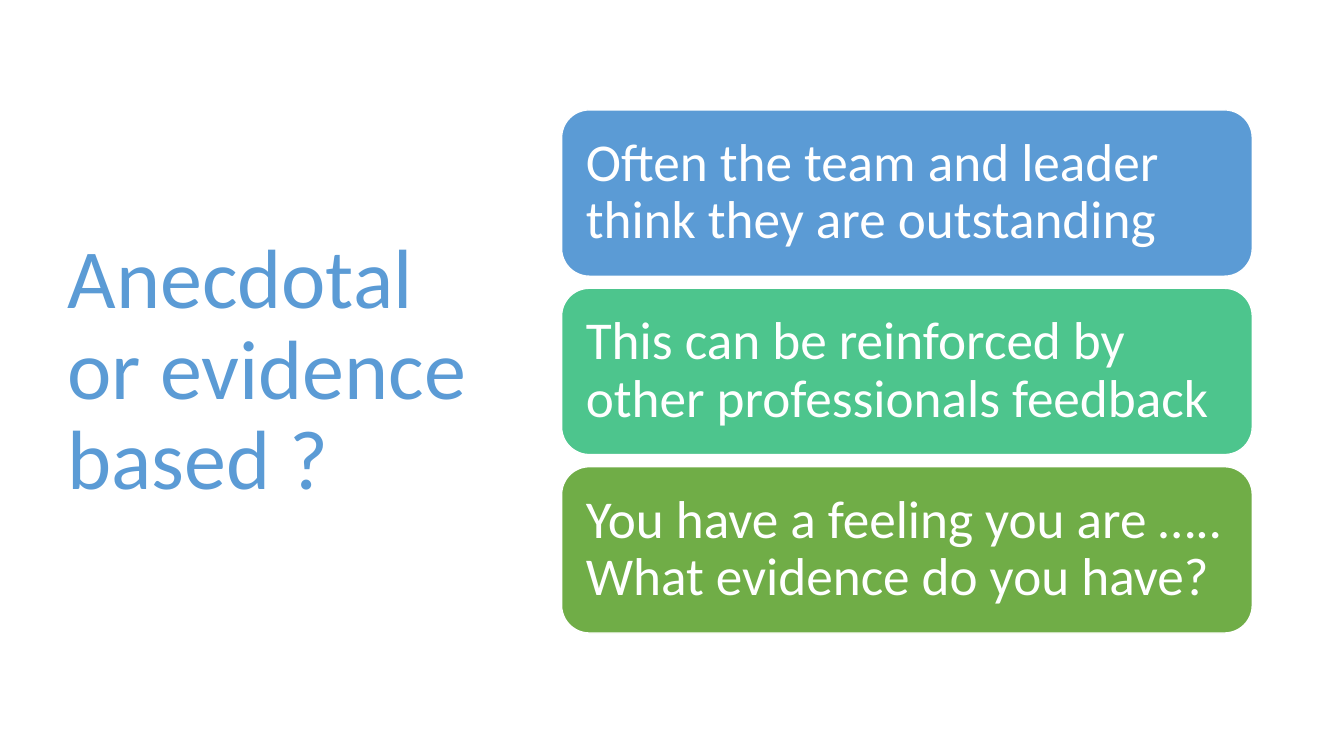
from pptx import Presentation
from pptx.dml.color import RGBColor
from pptx.enum.shapes import MSO_SHAPE as Shape
from pptx.enum.text import MSO_ANCHOR as Anchor, MSO_AUTO_SIZE as AutoSize, PP_ALIGN as Align
from pptx.util import Inches, Pt

COLORS = {"blue": "5B9BD5", "mint": "4DC58D", "green": "70AD47", "white": "FFFFFF"}

STATEMENTS = [
    ("Often the team and leader think they are outstanding", "blue"),
    ("This can be reinforced by other professionals feedback", "mint"),
    ("You have a feeling you are ….. What evidence do you have?", "green"),
]


def color(name):
    return RGBColor.from_string(COLORS[name])


class SlideBuilder:
    """Holds the text style and the current slide."""

    font = "Calibri"
    line_spacing = 0.9

    def __init__(self, slide):
        self.slide = slide

    def set_text(self, shape, text, size, color_name):
        frame = shape.text_frame
        frame.text = text
        frame.word_wrap = True
        frame.auto_size = AutoSize.NONE
        frame.vertical_anchor = Anchor.MIDDLE
        para = frame.paragraphs[0]
        para.alignment = Align.LEFT
        para.line_spacing = self.line_spacing
        span = para.runs[0]
        span.font.name = self.font
        span.font.size = Pt(size)
        span.font.color.rgb = color(color_name)

    def title(self, text, left, top, width, height):
        title = self.slide.shapes.title
        title.left, title.top = Inches(left), Inches(top)
        title.width, title.height = Inches(width), Inches(height)
        self.set_text(title, text, 60, "blue")

    def card(self, text, fill, left, top, width, height):
        box = self.slide.shapes.add_shape(
            Shape.ROUNDED_RECTANGLE, Inches(left), Inches(top), Inches(width), Inches(height))
        box.shadow.inherit = False
        box.fill.solid()
        box.fill.fore_color.rgb = color(fill)
        box.line.color.rgb = color("white")
        box.line.width = Pt(1)
        frame = box.text_frame
        frame.margin_left = frame.margin_right = Inches(0.16)
        frame.margin_top = frame.margin_bottom = Inches(0.16)
        self.set_text(box, text, 38, "white")


def main():
    deck = Presentation()
    deck.slide_width, deck.slide_height = Inches(13.33), Inches(7.5)
    page = SlideBuilder(deck.slides.add_slide(deck.slide_layouts[5]))

    # Title on the left
    page.title("Anecdotal or evidence based ?", 0.57, 0.68, 4.16, 6.02)

    # Stack of statement cards on the right
    first_top, pitch = 1.09, 1.77
    for row, (text, fill) in enumerate(STATEMENTS):
        page.card(text, fill, 5.57, first_top + row * pitch, 6.85, 1.65)

    deck.save("out.pptx")


if __name__ == "__main__":
    main()
